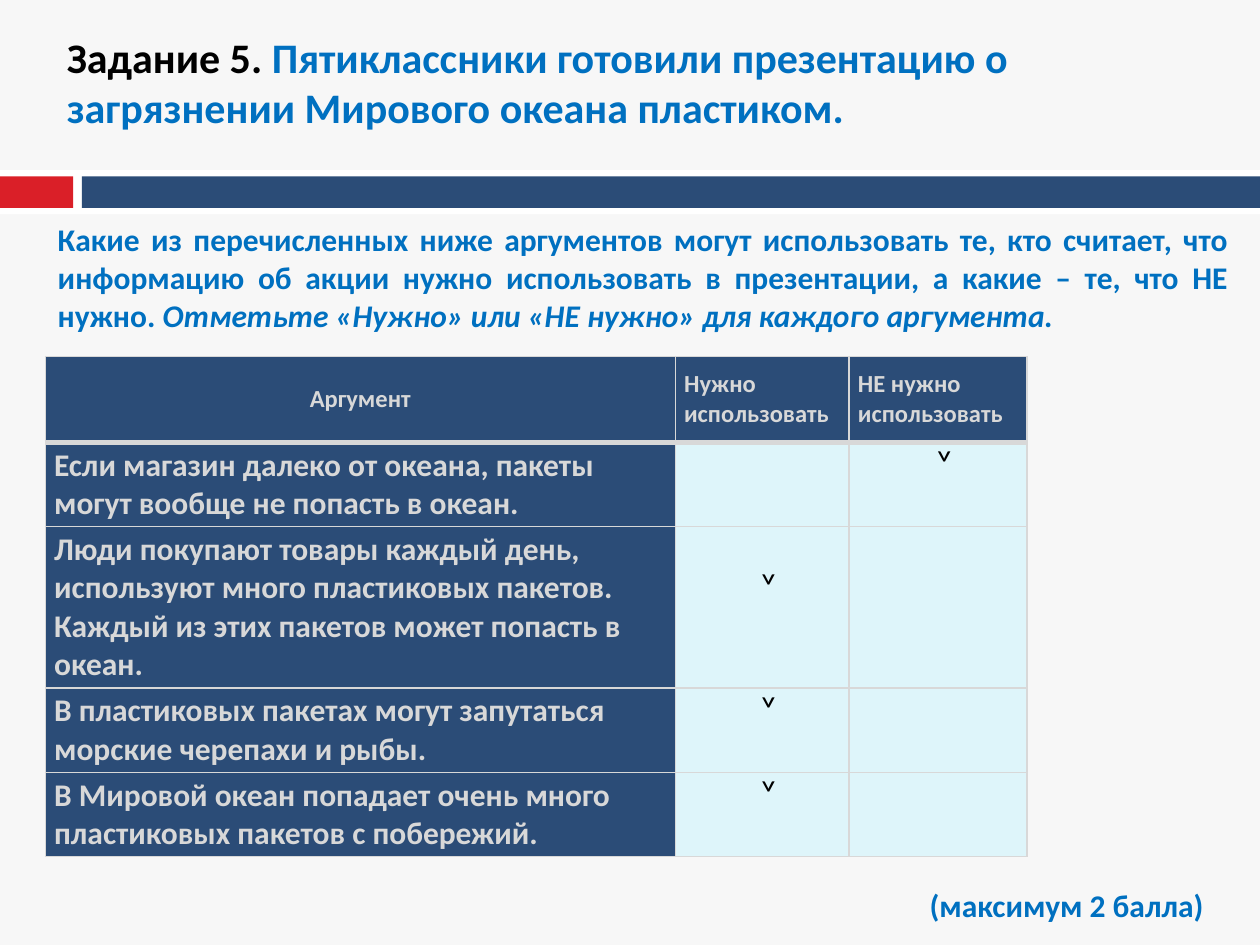
from pptx import Presentation
from pptx.dml.color import RGBColor as RGB
from pptx.enum.shapes import MSO_SHAPE as Shape
from pptx.enum.text import MSO_ANCHOR as Anchor, PP_ALIGN as Align
from pptx.oxml.ns import qn
from pptx.util import Inches, Pt
from lxml.etree import SubElement as Sub

HUES = {
    "back": "F7F7F7", "white": "FFFFFF", "red": "DA1F28", "navy": "2B4C77",
    "blue": "0070C0", "black": "000000", "gray": "D8D8D8", "pale": "DEF5FA",
}
HEADS = ["Аргумент", "Нужно использовать", "НЕ нужно использовать"]
# Each argument with the column of its mark
ROWS = [
    ("Если магазин далеко от океана, пакеты могут вообще не попасть в океан.", 2),
    ("Люди покупают товары каждый день, используют много пластиковых пакетов. "
     "Каждый из этих пакетов может попасть в океан.", 1),
    ("В пластиковых пакетах могут запутаться морские черепахи и рыбы.", 1),
    ("В Мировой океан попадает очень много пластиковых пакетов с побережий.", 1),
]
WIDTHS = [5, 1.38, 1.41]
HEIGHTS = [0.68, 0.67, 1.28, 0.67, 0.67]


def color(name):
    return RGB.from_string(HUES[name])


def write(par, text, size=18, hue="blue", bold=True, italic=False):
    run = par.add_run()
    run.text = text
    font = run.font
    font.name, font.size = "Calibri", Pt(size)
    font.bold, font.italic = bold, italic
    font.color.rgb = color(hue)


def add_bar(slide, left, top, width, height, hue):
    bar = slide.shapes.add_shape(
        Shape.RECTANGLE, *map(Inches, (left, top, width, height)))
    bar.shadow.inherit = False
    bar.fill.solid()
    bar.fill.fore_color.rgb = color(hue)
    bar.line.fill.background()


def add_box(slide, left, top, width, height, wrap=True):
    box = slide.shapes.add_textbox(*map(Inches, (left, top, width, height)))
    box.text_frame.word_wrap = wrap
    return box.text_frame.paragraphs[0]


def add_title(slide):
    title = slide.shapes.title
    title.left, title.top = Inches(0.43), Inches(0.2)
    title.width, title.height = Inches(9.19), Inches(0.91)
    frame = title.text_frame
    frame.word_wrap = True
    frame.vertical_anchor = Anchor.TOP
    par = frame.paragraphs[0]
    par.alignment = Align.LEFT
    par.line_spacing = 1.0
    par.space_before = Pt(0)
    write(par, "Задание 5. ", size=24, hue="black")
    write(par, "Пятиклассники готовили презентацию о загрязнении "
               "Мирового океана пластиком.", size=24)


def set_cell(cell, fill, head=False):
    cell.vertical_anchor = Anchor.MIDDLE
    cell.margin_left = cell.margin_right = Inches(0.07)
    cell.margin_top = cell.margin_bottom = 0
    # Borders come before the fill in the cell's XML
    props = cell._tc.get_or_add_tcPr()
    for side in "LRTB":
        width = 3 if head and side == "B" else 1
        line = Sub(props, qn(f"a:ln{side}"), w=str(Pt(width)))
        Sub(Sub(line, qn("a:solidFill")), qn("a:srgbClr"), val=HUES["gray"])
    cell.fill.solid()
    cell.fill.fore_color.rgb = color(fill)
    return cell.text_frame.paragraphs[0]


def add_grid(slide):
    grid = slide.shapes.add_table(
        len(HEIGHTS), len(WIDTHS), Inches(0.36), Inches(2.83),
        Inches(sum(WIDTHS)), Inches(sum(HEIGHTS))).table
    for col, width in zip(grid.columns, WIDTHS):
        col.width = Inches(width)
    for row, height in zip(grid.rows, HEIGHTS):
        row.height = Inches(height)

    # Header row
    for col, text in enumerate(HEADS):
        par = set_cell(grid.cell(0, col), "navy", head=True)
        par.alignment = Align.LEFT if col else Align.CENTER
        write(par, text, size=14, hue="gray")

    # Arguments and marks
    for row, (text, mark) in enumerate(ROWS, 1):
        write(set_cell(grid.cell(row, 0), "navy"), text, hue="gray")
        for col in (1, 2):
            cell = grid.cell(row, col)
            par = set_cell(cell, "pale")
            if col == mark:
                cell.margin_bottom = Inches(0.33)
                par.alignment = Align.CENTER
                par._p.get_or_add_pPr().set("indent", str(Inches(0.1)))
                write(par, "˅", size=20, hue="black", bold=False)


def main():
    deck = Presentation()
    deck.slide_width, deck.slide_height = Inches(10), Inches(7.5)
    slide = deck.slides.add_slide(deck.slide_layouts[5])
    slide.background.fill.solid()
    slide.background.fill.fore_color.rgb = color("back")

    # Band under the title
    add_bar(slide, 0, 1.35, 10, 0.35, "white")
    add_bar(slide, 0, 1.4, 0.58, 0.25, "red")
    add_bar(slide, 0.65, 1.4, 9.35, 0.25, "navy")
    add_title(slide)

    # Question
    par = add_box(slide, 0.36, 1.7, 9.49, 1.01)
    par.alignment = Align.JUSTIFY
    write(par, "Какие из перечисленных ниже аргументов могут использовать те, "
               "кто считает, что информацию об акции нужно использовать в "
               "презентации, а какие – те, что НЕ нужно. ")
    write(par, "Отметьте «Нужно» или «НЕ нужно» для каждого аргумента.",
          italic=True)

    add_grid(slide)

    # Score
    write(add_box(slide, 7.28, 6.98, 2.4, 0.4, wrap=False),
          "(максимум 2 балла)")
    deck.save("out.pptx")


if __name__ == "__main__":
    main()
